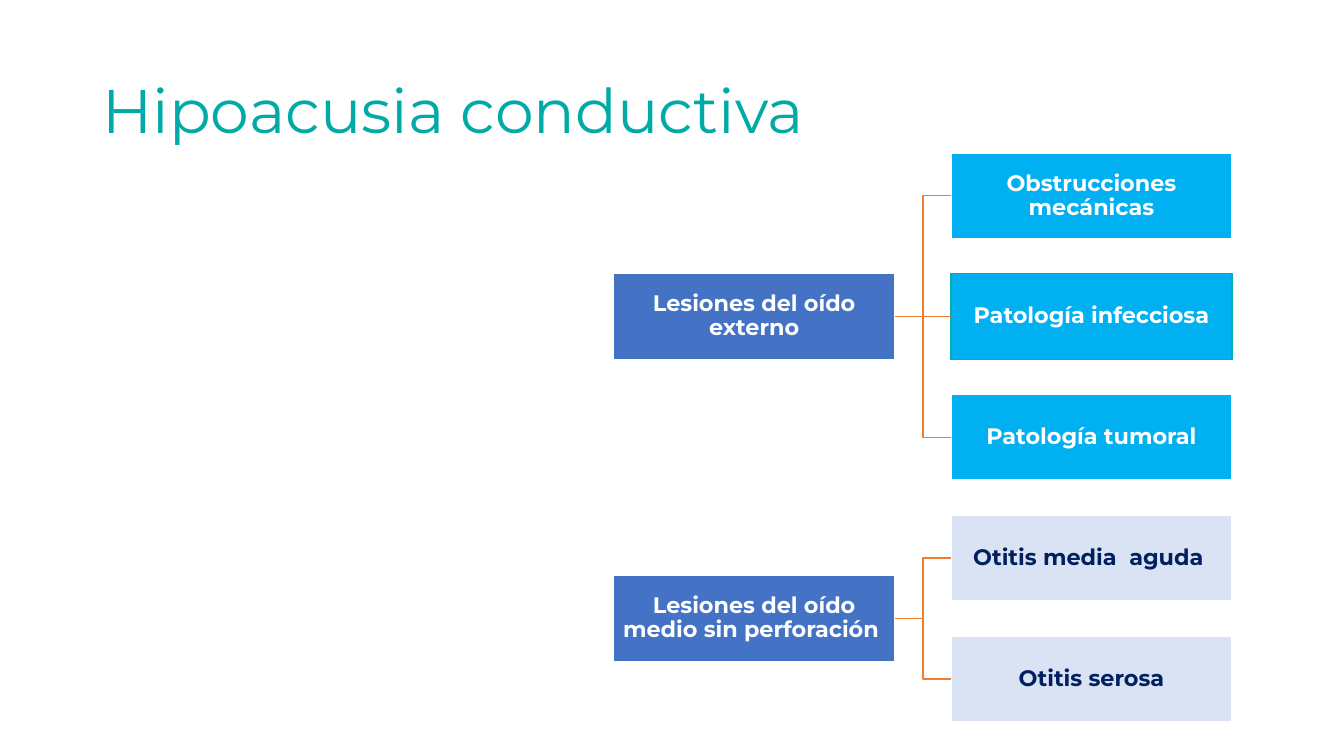
from dataclasses import dataclass

from lxml import etree
from pptx import Presentation
from pptx.dml.color import RGBColor
from pptx.enum import shapes, text
from pptx.oxml import ns
from pptx.util import Pt


@dataclass(frozen=True)
class Theme:
    font: str = "Montserrat"
    title_size: int = 44
    box_size: int = 16
    title: str = "00AAA7"
    lesion: str = "4472C4"
    external: str = "00B0F0"
    middle: str = "DAE3F3"
    navy: str = "002060"
    white: str = "FFFFFF"
    highlight: str = "00B0AC"
    branch: str = "ED7D31"


THEME = Theme()
BOX_WIDTH, BOX_HEIGHT = 200.9, 61.2
ROW_PITCH = 86.25
COLUMN_PITCH = 240.9

# Lesion, colour of its causes, colour of their text, causes, highlighted cause
LESIONS = [
    ("Lesiones del oído externo", THEME.external, THEME.white,
     ["Obstrucciones mecánicas", "Patología infecciosa", "Patología tumoral"],
     "Patología infecciosa"),
    ("Lesiones del oído medio sin perforación ", THEME.middle, THEME.navy,
     ["Otitis media  aguda ", "Otitis serosa"], None),
]


def rgb(value):
    return RGBColor.from_string(value)


def add_run(paragraph, words, size, color, bold=False):
    paragraph.line_spacing = 0.9
    run = paragraph.add_run()
    run.text = words
    run.font.name = THEME.font
    run.font.size = Pt(size)
    run.font.bold = bold
    run.font.color.rgb = rgb(color)


def place_title(slide, words, left, top, width, height):
    title = slide.shapes.title
    title.left, title.top = Pt(left), Pt(top)
    title.width, title.height = Pt(width), Pt(height)
    frame = title.text_frame
    frame.vertical_anchor = text.MSO_ANCHOR.MIDDLE
    paragraph = frame.paragraphs[0]
    paragraph.alignment = text.PP_ALIGN.LEFT
    add_run(paragraph, words, THEME.title_size, THEME.title)


def add_box(slide, words, left, top, fill, color, outline=THEME.white):
    box = slide.shapes.add_shape(shapes.MSO_SHAPE.RECTANGLE, Pt(left), Pt(top),
                                 Pt(BOX_WIDTH), Pt(BOX_HEIGHT))
    box.shadow.inherit = False
    box.fill.solid()
    box.fill.fore_color.rgb = rgb(fill)
    box.line.color.rgb = rgb(outline)
    box.line.width = Pt(1)
    frame = box.text_frame
    frame.word_wrap = True
    frame.vertical_anchor = text.MSO_ANCHOR.MIDDLE
    frame.margin_left = frame.margin_right = Pt(0.8)
    frame.margin_top = frame.margin_bottom = Pt(0.8)
    paragraph = frame.paragraphs[0]
    paragraph.alignment = text.PP_ALIGN.CENTER
    add_run(paragraph, words, THEME.box_size, color, bold=True)
    return box


def add_branch(slide, lesion, cause):
    """Join the right side of a lesion to the left side of a cause."""
    kind = (shapes.MSO_CONNECTOR.STRAIGHT if lesion.top == cause.top
            else shapes.MSO_CONNECTOR.ELBOW)
    branch = slide.shapes.add_connector(kind, 0, 0, 0, 0)
    branch.begin_connect(lesion, 3)
    branch.end_connect(cause, 1)
    branch.line.color.rgb = rgb(THEME.branch)
    branch.line.width = Pt(1)
    etree.SubElement(branch.element.spPr, ns.qn("a:effectLst"))


def draw_lesion_tree(slide, left, top):
    """Stack the causes in the right column, each lesion centred on its own."""
    row = 0
    for name, fill, color, causes, highlighted in LESIONS:
        middle_row = row + (len(causes) - 1) / 2
        lesion = add_box(slide, name, left, top + middle_row * ROW_PITCH,
                         THEME.lesion, THEME.white)
        for cause_name in causes:
            outline = THEME.highlight if cause_name == highlighted else THEME.white
            cause = add_box(slide, cause_name, left + COLUMN_PITCH,
                            top + row * ROW_PITCH, fill, color, outline)
            add_branch(slide, lesion, cause)
            row += 1


def main():
    deck = Presentation()
    deck.slide_width, deck.slide_height = Pt(960), Pt(540)
    slide = deck.slides.add_slide(deck.slide_layouts.get_by_name("Title Only"))
    place_title(slide, "Hipoacusia conductiva", 66, 28.75, 828, 104.4)
    draw_lesion_tree(slide, 438.3, 109.3)
    deck.save("out.pptx")


if __name__ == "__main__":
    main()
